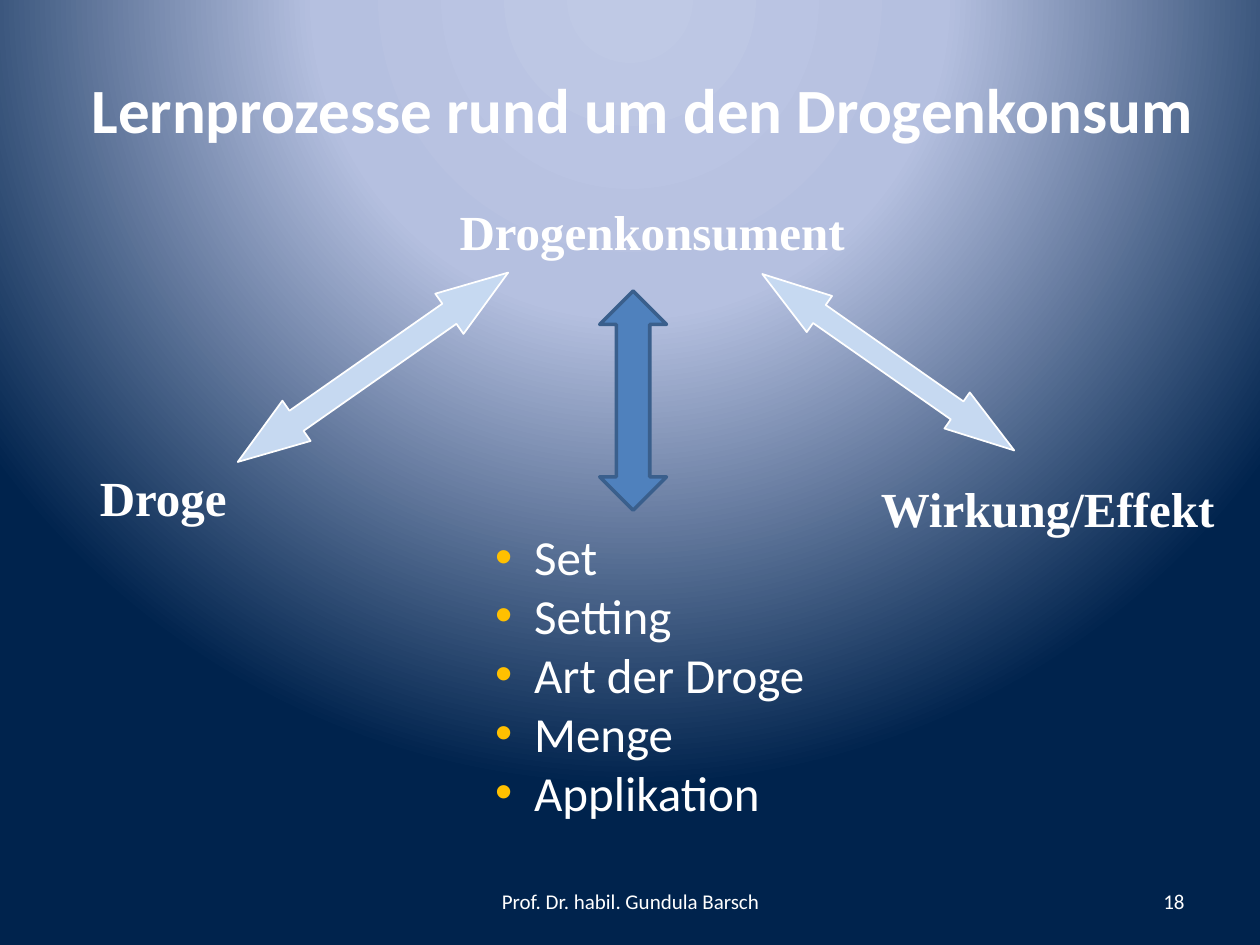
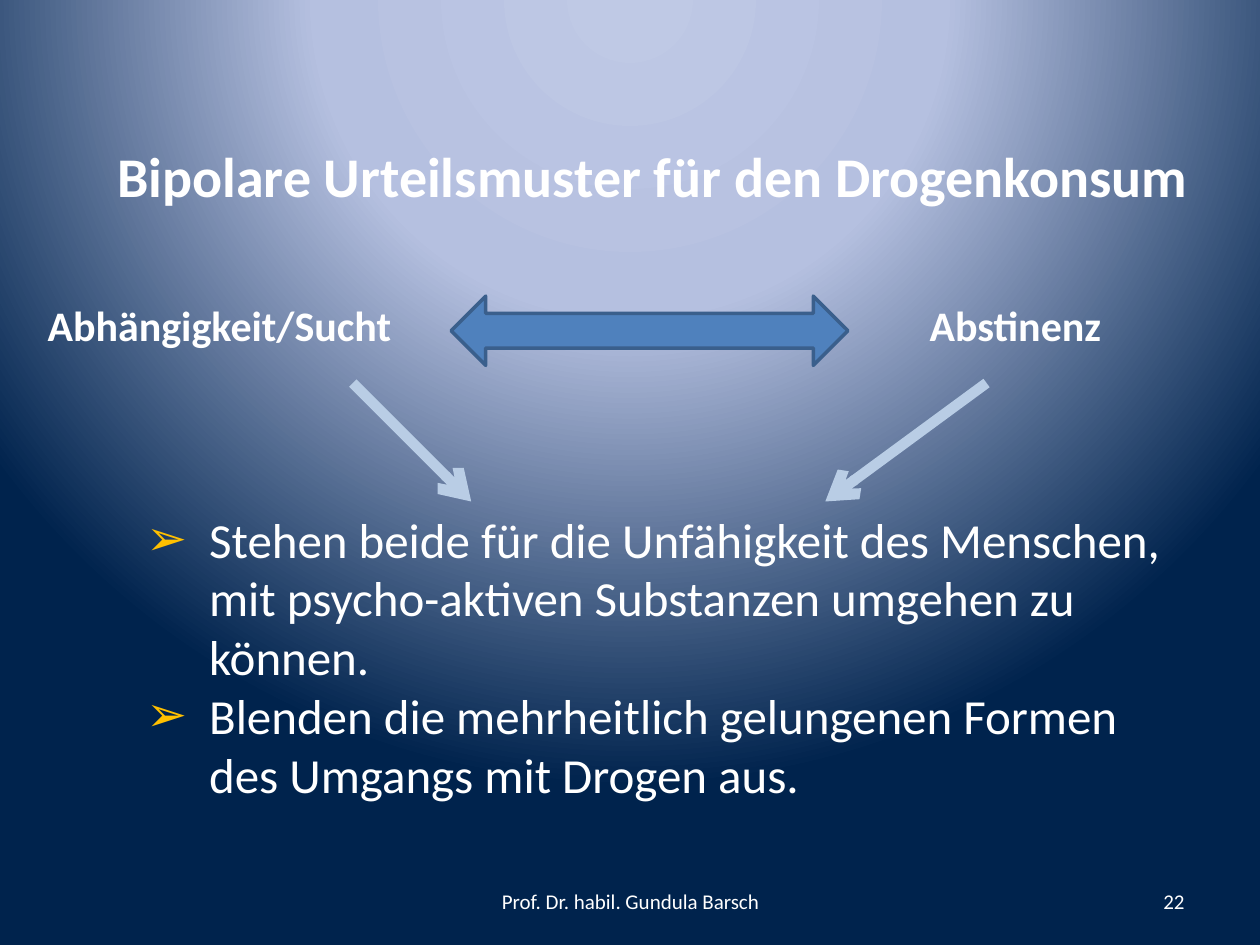
from lxml import etree
from pptx import Presentation, util as u
from pptx.dml.color import RGBColor
from pptx.enum import shapes as s, text as t
from pptx.oxml import parse_xml
from pptx.oxml.ns import nsdecls, qn

PX = 9144
HUES = {
    "white": "FFFFFF", "gold": "FFC000", "blue": "4F81BD", "edge": "3A5F8C",
    "pale": "C6D9F1", "mist": "B9CDE5",
    "glow": "BFC9E5", "haze": "B5C0E0", "navy": "00234D",
}
GLOW = [(0, "glow"), (40, "haze"), (100, "navy")]

FOOT = {"size": 12, "anchor": "MIDDLE"}
HEAD = {"size": 36, "bold": True}
LEFT = {"size": 32, "bold": True, "align": "LEFT", "wrap": False}
NODE = {"size": 28, "bold": True, "name": "Times New Roman", "anchor": "MIDDLE"}
POLE = {"size": 24, "bold": True, "align": "LEFT", "wrap": False}
LIST = {"size": 28, "align": "LEFT"}

BIG = {"fill": "blue", "line": "edge", "width": 2}
SLIM = {"fill": "pale", "line": "white", "width": 1}


def hue(name):
    return RGBColor.from_string(HUES[name])


def apply(item, vals):
    for key, val in vals.items():
        setattr(item, key, val)


def place(shape, box):
    apply(shape, {k: v * PX for k, v in zip(("left", "top", "width", "height"), box)})


def write(shape, lines, size, name="Calibri", bold=False, align="CENTER",
          anchor="TOP", wrap=True):
    frame = shape.text_frame
    frame.text = "\n".join(lines)
    apply(frame, {"word_wrap": wrap, "auto_size": t.MSO_AUTO_SIZE.NONE,
                  "vertical_anchor": getattr(t.MSO_ANCHOR, anchor)})
    for para in frame.paragraphs:
        apply(para, {"alignment": getattr(t.PP_ALIGN, align), "space_before": u.Pt(0)})
        for run in para.runs:
            apply(run.font, {"size": u.Pt(size), "name": name, "bold": bold})
            run.font.color.rgb = hue("white")


def label(slide, box, words, style):
    shape = slide.shapes.add_textbox(*(v * PX for v in box))
    write(shape, [words], **style)


def title(slide, box, words, style):
    shape = slide.shapes.title
    place(shape, box)
    write(shape, [words], **style)


def points(slide, box, lines, mark, dent):
    shape = slide.placeholders[1]
    place(shape, box)
    write(shape, lines, **LIST)
    for para in shape.text_frame.paragraphs:
        props = para._p.get_or_add_pPr()
        props.set("marL", str(dent * PX))
        props.set("indent", str(-dent * PX))
        tint = etree.SubElement(props, qn("a:buClr"))
        etree.SubElement(tint, qn("a:srgbClr"), val=HUES["gold"])
        etree.SubElement(props, qn("a:buChar"), char=mark)


def arrow(slide, kind, box, look, turn=0, tip=0.5):
    shape = slide.shapes.add_shape(kind, *(v * PX for v in box))
    shape.shadow.inherit = False
    shape.rotation = turn
    shape.adjustments[1 if kind == s.MSO_SHAPE.LEFT_RIGHT_ARROW else 0] = (
        tip if kind == s.MSO_SHAPE.LEFT_RIGHT_ARROW else 0.5)
    shape.fill.solid()
    shape.fill.fore_color.rgb = hue(look["fill"])
    shape.line.color.rgb = hue(look["line"])
    shape.line.width = u.Pt(look["width"])


def link(slide, start, end):
    ends = (v * PX for v in start + end)
    line = slide.shapes.add_connector(s.MSO_CONNECTOR.STRAIGHT, *ends)
    line.line.color.rgb = hue("mist")
    line.line.width = u.Pt(6)
    etree.SubElement(line.line._get_or_add_ln(), qn("a:tailEnd"), type="arrow")
    etree.SubElement(line._element.spPr, qn("a:effectLst"))


def backdrop(master):
    master.background.fill.solid()
    props = master.element.find(".//" + qn("p:bgPr"))
    stops = "".join(
        f'<a:gs pos="{pos * 1000}"><a:srgbClr val="{HUES[name]}"/></a:gs>'
        for pos, name in GLOW)
    props.replace(props[0], parse_xml(
        f'<a:gradFill {nsdecls("a")} rotWithShape="1"><a:gsLst>{stops}</a:gsLst>'
        '<a:path path="circle"><a:fillToRect l="50000" t="-80000" r="50000" b="180000"/>'
        '</a:path></a:gradFill>'))


def page(deck, num):
    slide = deck.slides.add_slide(deck.slide_layouts[1])
    label(slide, (342, 695, 317, 40), "Prof. Dr. habil. Gundula Barsch", FOOT)
    label(slide, (717, 695, 233, 40), str(num), {**FOOT, "align": "RIGHT"})
    return slide


def learning(deck):
    slide = page(deck, 18)
    title(slide, (24, 51, 972, 71), "Lernprozesse rund um den Drogenkonsum", HEAD)
    for words, box in (("Droge", (59, 358, 141, 73)),
                       ("Wirkung/Effekt", (670, 367, 323, 73)),
                       ("Drogenkonsument", (338, 147, 359, 73))):
        label(slide, box, words, NODE)
    flat = s.MSO_SHAPE.LEFT_RIGHT_ARROW
    arrow(slide, flat, (583, 270, 244, 35), SLIM, 35, 1.58)
    arrow(slide, flat, (165, 272, 262, 39), SLIM, 325, 1.46)
    points(slide, (383, 413, 290, 246),
           ["Set", "Setting", "Art der Droge", "Menge", "Applikation"], "•", 31)
    arrow(slide, s.MSO_SHAPE.UP_DOWN_ARROW, (476, 231, 53, 174), BIG)


def poles(deck):
    slide = page(deck, 22)
    title(slide, (83, 107, 878, 64), "Bipolare Urteilsmuster für den Drogenkonsum", LEFT)
    arrow(slide, s.MSO_SHAPE.LEFT_RIGHT_ARROW, (358, 235, 315, 55), BIG)
    label(slide, (28, 233, 296, 50), "Abhängigkeit/Sucht", POLE)
    label(slide, (728, 233, 158, 50), "Abstinenz", POLE)
    points(slide, (106, 399, 835, 246), [
        "Stehen beide für die Unfähigkeit des Menschen, "
        "mit psycho-aktiven Substanzen umgehen zu können.",
        "Blenden die mehrheitlich gelungenen Formen des Umgangs mit Drogen aus.",
    ], "➢", 50)
    link(slide, (783, 304), (655, 398))
    link(slide, (280, 304), (374, 398))


def main():
    deck = Presentation()
    apply(deck, {"slide_width": 1000 * PX, "slide_height": 750 * PX})
    backdrop(deck.slide_master)
    learning(deck)
    poles(deck)
    deck.save("out.pptx")


if __name__ == "__main__":
    main()
